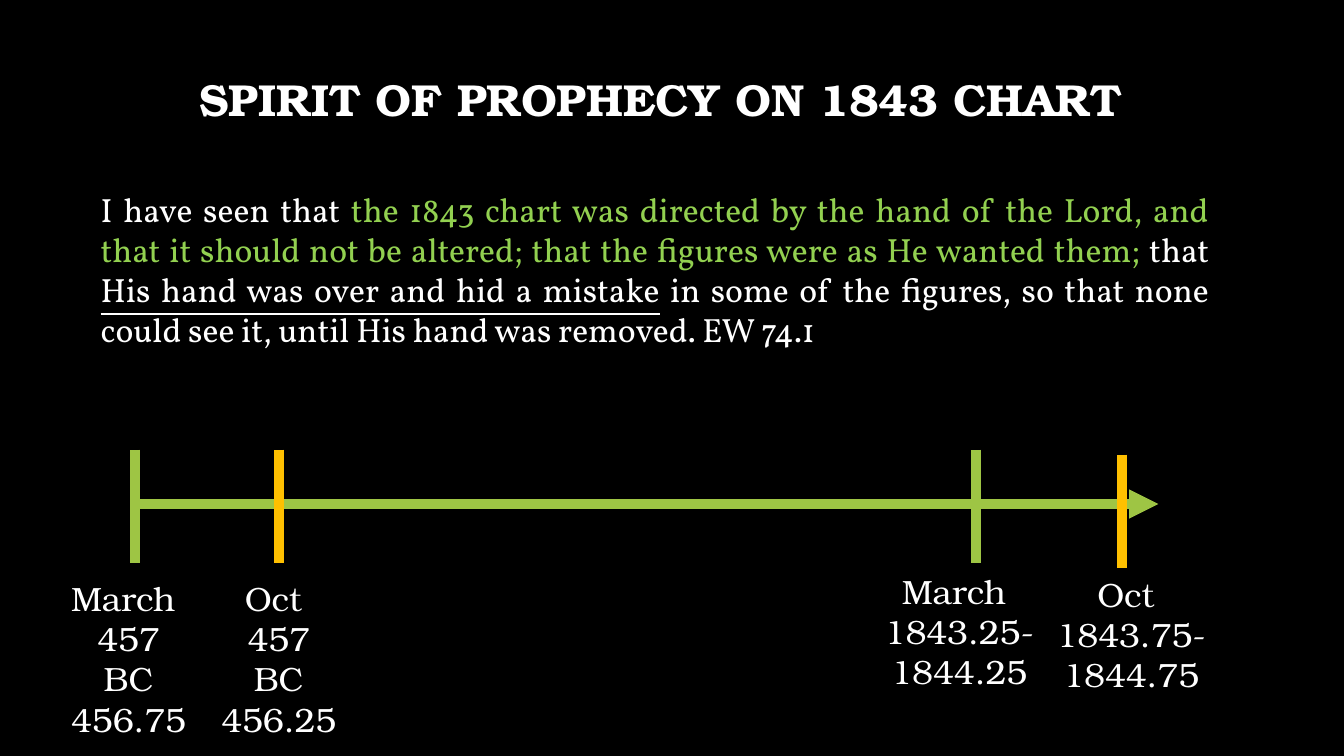
from lxml import etree
from pptx import Presentation
from pptx.dml.color import RGBColor
from pptx.enum.shapes import MSO_CONNECTOR
from pptx.enum.text import MSO_ANCHOR, MSO_AUTO_SIZE, PP_ALIGN
from pptx.oxml.ns import qn
from pptx.util import Inches, Pt

STRAIGHT = MSO_CONNECTOR.STRAIGHT
CENTER, JUSTIFY = PP_ALIGN.CENTER, PP_ALIGN.JUSTIFY
BOTTOM = MSO_ANCHOR.BOTTOM
FIT_SHAPE, NO_FIT = MSO_AUTO_SIZE.SHAPE_TO_FIT_TEXT, MSO_AUTO_SIZE.NONE

# Content
SERIF, BODY = "TeX Gyre Bonum", "Vollkorn"
BLACK, WHITE, LIME = "000000", "FFFFFF", "92D050"
GREEN, AMBER = "9EC544", "FFC000"

TITLE = "SPIRIT OF PROPHECY ON 1843 CHART"
QUOTE = [  # text, colour, underlined
    ("I have seen that ", WHITE, False),
    ("the 1843 chart was directed by the hand of the Lord, and that it should "
     "not be altered; that the figures were as He wanted them;", LIME, False),
    (" that ", WHITE, False),
    ("His hand was over and hid a mistake", WHITE, True),
    (" in some of the figures, so that none could see it, until His hand was "
     "removed. EW 74.1", WHITE, False),
]
AXIS_Y, AXIS_START, AXIS_END = 5, 1.33, 11.49
TICK_HEIGHT, LINE_WIDTH = 1.13, 7
DATES = [  # tick x, tick top, colour, label box, label paragraphs
    (1.34, 4.46, GREEN, (0.57, 5.68, 1.41, 1.31), ("March ", "457 BC\v456.75")),
    (2.77, 4.46, AMBER, (2.06, 5.68, 1.41, 1.31), ("Oct ", "457 BC\v456.25")),
    (9.68, 4.46, GREEN, (8.65, 5.61, 1.73, 1.72), ("March ", "1843.25- 1844.25")),
    (11.13, 4.51, AMBER, (10.26, 5.64, 1.92, 1.72), ("Oct ", "1843.75- 1844.75")),
]


def rgb(color):
    return RGBColor.from_string(color)


def set_font(font, name, size, color):
    font.name, font.size = name, Pt(size)
    font.color.rgb = rgb(color)


def add_text_box(s, box):
    tf = s.shapes.add_textbox(*map(Inches, box)).text_frame
    tf.word_wrap = True
    tf.auto_size = FIT_SHAPE
    return tf


def add_line(s, x1, y1, x2, y2, color):
    line = s.shapes.add_connector(STRAIGHT, *map(Inches, (x1, y1, x2, y2)))
    line.line.color.rgb = rgb(color)
    line.line.width = Pt(LINE_WIDTH)
    etree.SubElement(line._element.spPr, qn("a:effectLst"))
    return line


prs = Presentation()
prs.slide_width, prs.slide_height = Inches(13.33), Inches(7.5)
s = prs.slides.add_slide(prs.slide_layouts[5])
s.background.fill.solid()
s.background.fill.fore_color.rgb = rgb(BLACK)

# Title
title = s.shapes.title
title.left, title.top, title.width, title.height = map(Inches, (1.49, 0.61, 10.13, 0.69))
tf = title.text_frame
tf.text = TITLE
tf.vertical_anchor = BOTTOM
tf.auto_size = NO_FIT
p = tf.paragraphs[0]
p.alignment, p.line_spacing = CENTER, 0.9
set_font(p.font, SERIF, 32, WHITE)
p.font.bold = True

# Quotation
p = add_text_box(s, (0.9, 1.82, 11.19, 1.72)).paragraphs[0]
p.alignment = JUSTIFY
for text, color, underlined in QUOTE:
    r = p.add_run()
    r.text = text
    set_font(r.font, BODY, 24, color)
    r.font.underline = underlined

# Timeline axis
axis = add_line(s, AXIS_START, AXIS_Y, AXIS_END, AXIS_Y, GREEN)
etree.SubElement(axis.line._get_or_add_ln(), qn("a:tailEnd"), type="triangle")

# Ticks and date labels
for x, top, color, box, label in DATES:
    add_line(s, x, top, x, top + TICK_HEIGHT, color)
    tf = add_text_box(s, box)
    for i, text in enumerate(label):
        p = tf.add_paragraph() if i else tf.paragraphs[0]
        p.text = text
        p.alignment = CENTER
        set_font(p.font, SERIF, 24, WHITE)

prs.save("out.pptx")
